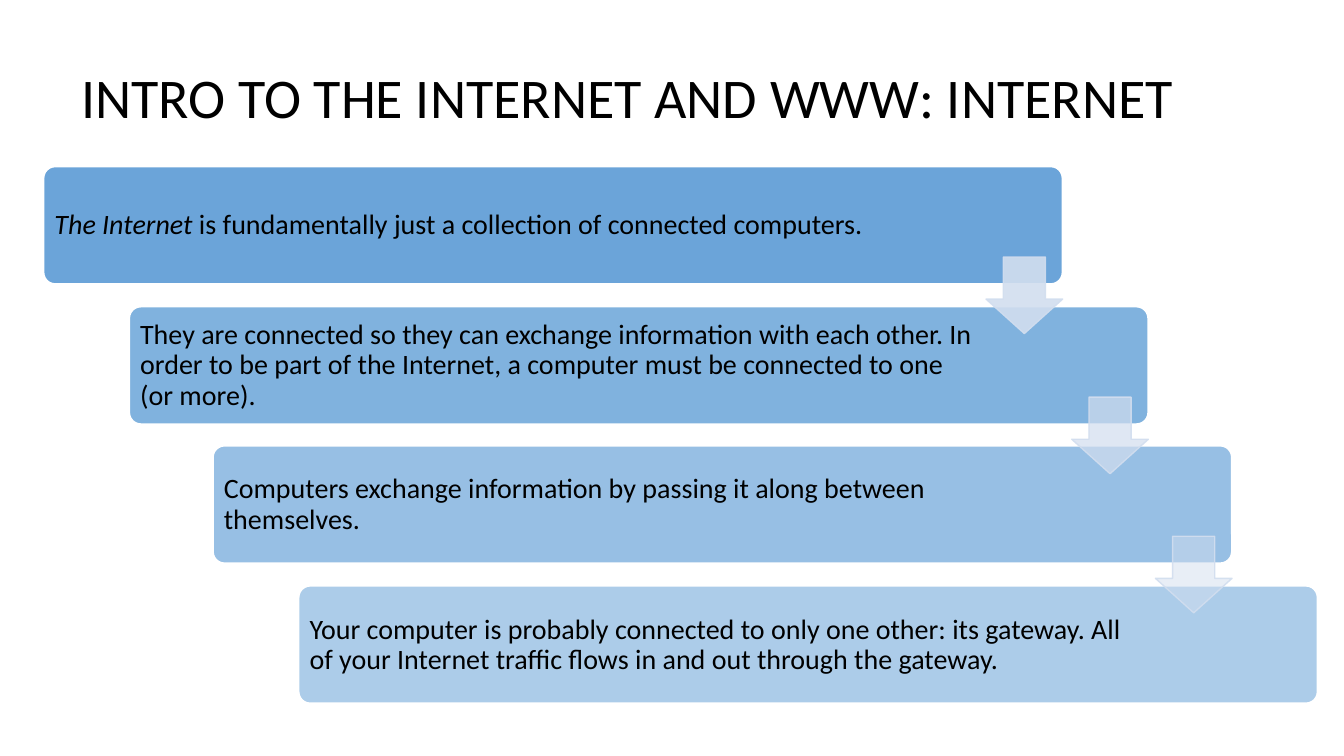
from lxml import etree
from pptx import Presentation
from pptx import util as u
from pptx.dml.color import RGBColor
from pptx.enum import shapes, text
from pptx.oxml import ns

PX = 9144  # EMU, 100 px to the inch
BLACK = RGBColor(0x00, 0x00, 0x00)
WHITE = RGBColor(0xFF, 0xFF, 0xFF)
BLUE = RGBColor(0x5B, 0x9B, 0xD5)
PALE_BLUE = RGBColor(0xD2, 0xDE, 0xEF)

BOX_WIDTH, BOX_HEIGHT = 1011, 117
FIRST_TOP, LAST_TOP = 165, 581
ARROW_SIZE, ARROW_DX, ARROW_DY = 76, 935, 90

# left, text width, opacity of box, opacity of the arrow below, runs (text, italic)
STEPS = [
    (43, 875, 90, 90, [
        ("The Internet", True),
        (" is fundamentally just a collection of connected computers.", False)]),
    (128, 844, 77, 70, [
        ("They are connected so they can exchange information with each other. "
         "In order to be part of the Internet, a computer must be connected to "
         "one (or more).", False)]),
    (211, 845, 63, 50, [
        ("Computers exchange information by passing it along between themselves.",
         False)]),
    (296, 844, 50, None, [
        ("Your computer is probably connected to only one other: its gateway. All "
         "of your Internet traffic flows in and out through the gateway.", False)]),
]


def emu(*lengths):
    return [u.Emu(length * PX) for length in lengths]


def apply_format(target, values):
    for name, value in values.items():
        setattr(target, name, value)


def set_opacity(fill_parent, percent):
    """Make the solid fill directly under the given element partly transparent."""
    color = fill_parent.find(ns.qn("a:solidFill"))[0]
    etree.SubElement(color, ns.qn("a:alpha")).set("val", str(percent * 1000))


def add_block(slide, kind, bounds, adjustments, fill, opacity, line, line_width):
    shape = slide.shapes.add_shape(kind, *emu(*bounds))
    shape.shadow.inherit = False
    for index, value in enumerate(adjustments):
        shape.adjustments[index] = value
    shape.fill.solid()
    shape.fill.fore_color.rgb = fill
    set_opacity(shape.element.spPr, opacity)
    shape.line.color.rgb = line
    shape.line.width = u.Pt(line_width)
    return shape


def add_text(slide, bounds, runs, size, inset_x, inset_y):
    frame = slide.shapes.add_textbox(*emu(*bounds)).text_frame
    side, edge = emu(inset_x, inset_y)
    apply_format(frame, {
        "word_wrap": True, "vertical_anchor": text.MSO_ANCHOR.MIDDLE,
        "margin_left": side, "margin_right": side,
        "margin_top": edge, "margin_bottom": edge})
    paragraph = frame.paragraphs[0]
    paragraph.line_spacing = 0.9
    for content, italic in runs:
        run = paragraph.add_run()
        run.text = content
        apply_format(run.font, {"name": "Calibri", "size": u.Pt(size), "italic": italic})
        run.font.color.rgb = BLACK


def add_step(slide, left, top, text_width, opacity, runs):
    add_block(slide, shapes.MSO_SHAPE.ROUNDED_RECTANGLE,
              (left, top, BOX_WIDTH, BOX_HEIGHT), [0.1], BLUE, opacity, WHITE, 1.5)
    add_text(slide, (left + 3, top + 4, text_width, 110), runs, 20, 8, 8)


def add_arrow(slide, left, top, opacity):
    arrow = add_block(slide, shapes.MSO_SHAPE.DOWN_ARROW,
                      (left, top, ARROW_SIZE, ARROW_SIZE), [0.55, 0.45],
                      PALE_BLUE, opacity, PALE_BLUE, 1)
    set_opacity(arrow.element.spPr.find(ns.qn("a:ln")), 90)


def main():
    presentation = Presentation()
    presentation.slide_width, presentation.slide_height = u.Inches(13.33), u.Inches(7.5)
    slide = presentation.slides.add_slide(presentation.slide_layouts[6])

    pitch = (LAST_TOP - FIRST_TOP) / (len(STEPS) - 1)
    tops = [round(FIRST_TOP + index * pitch) for index in range(len(STEPS))]
    for top, (left, text_width, opacity, _, runs) in zip(tops, STEPS):
        add_step(slide, left, top, text_width, opacity, runs)
    for top, (left, _, _, opacity, _) in zip(tops, STEPS[:-1]):
        add_arrow(slide, left + ARROW_DX, top + ARROW_DY, opacity)

    add_text(slide, (71, 27, 1150, 145),
             [("INTRO TO THE INTERNET AND WWW: INTERNET", False)], 40, 10, 5)
    presentation.save("out.pptx")


if __name__ == "__main__":
    main()
